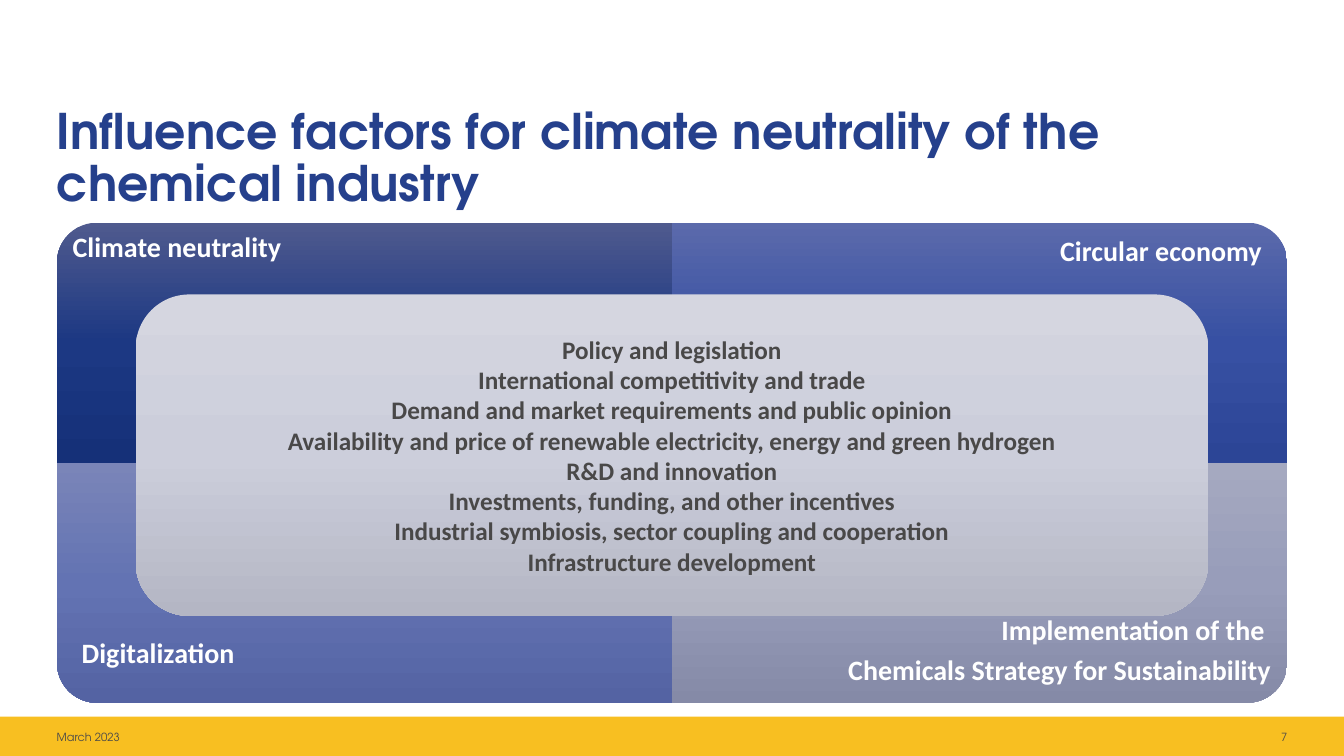
from lxml import etree
from pptx import Presentation
from pptx.dml.color import RGBColor
from pptx.enum.shapes import MSO_SHAPE
from pptx.enum.text import MSO_ANCHOR, PP_ALIGN
from pptx.oxml.ns import qn
from pptx.util import Cm, Pt

LEFT, CENTER, RIGHT = PP_ALIGN.LEFT, PP_ALIGN.CENTER, PP_ALIGN.RIGHT
TOP, MIDDLE = MSO_ANCHOR.TOP, MSO_ANCHOR.MIDDLE
RECTANGLE = MSO_SHAPE.RECTANGLE
ROUNDED = MSO_SHAPE.ROUNDED_RECTANGLE
ONE_ROUND_CORNER = MSO_SHAPE.ROUND_1_RECTANGLE

HEADING_FONT, BODY_FONT = "TeX Gyre Adventor", "Calibri"
SLIDE_WIDTH, SLIDE_HEIGHT = 33.87, 19.05
MARGIN = 1.43
CENTER_X, CENTER_Y = SLIDE_WIDTH / 2, 11.66
QUADRANT_WIDTH, QUADRANT_HEIGHT = 15.5, 6.05

# horizontal side, vertical side, rotation, gradient colours from top to bottom
QUADRANTS = [
    (-1, -1, 270, ("4F5A8E", "1C3883", "153078")),
    (1, -1, 0, ("5B6AAB", "3750A3", "2C4596")),
    (-1, 1, 180, ("7A85B8", "6373B3", "5463A3")),
    (1, 1, 90, ("A5A9C0", "989DBA", "858AA7")),
]
LABEL_WIDTH = 14
# lines, left, vertical centre, alignment
LABELS = [
    (["Climate neutrality"], 1.83, 6.25, LEFT),
    (["Circular economy"], 31.8 - LABEL_WIDTH, 6.35, RIGHT),
    (["Digitalization"], 2.06, 16.49, LEFT),
    (["Implementation of the ", "Chemicals Strategy for Sustainability"],
     32.03 - LABEL_WIDTH, 16.41, RIGHT),
]
FACTORS = [
    "Policy and legislation",
    "International competitivity and trade",
    "Demand and market requirements and public opinion",
    "Availability and price of renewable electricity, energy and green hydrogen",
    "R&D and innovation",
    "Investments, funding, and other incentives",
    "Industrial symbiosis, sector coupling and cooperation",
    "Infrastructure development",
]


def color(hex_string):
    return RGBColor.from_string(hex_string)


def write_text(shape, lines, size, font, text_color, bold=False, align=LEFT,
               anchor=MIDDLE, line_spacing=1.0, gap=0):
    """Fill a shape with one paragraph per line; gap is the points between them."""
    frame = shape.text_frame
    frame.word_wrap = True
    frame.vertical_anchor = anchor
    frame.margin_left = frame.margin_right = 0
    frame.margin_top = frame.margin_bottom = 0
    for index, line in enumerate(lines):
        paragraph = frame.add_paragraph() if index else frame.paragraphs[0]
        paragraph.alignment = align
        paragraph.line_spacing = line_spacing
        paragraph.space_before = Pt(gap if index else 0)
        run = paragraph.add_run()
        run.text = line
        run.font.name = font
        run.font.size = Pt(size)
        run.font.bold = bold
        run.font.color.rgb = color(text_color)


def add_text(slide, left, top, width, height, lines, **text_format):
    box = slide.shapes.add_textbox(Cm(left), Cm(top), Cm(width), Cm(height))
    write_text(box, lines, **text_format)


def add_block(slide, kind, left, top, width, height):
    shape = slide.shapes.add_shape(kind, Cm(left), Cm(top), Cm(width), Cm(height))
    shape.shadow.inherit = False
    shape.line.fill.background()
    return shape


def fill_gradient(shape, colors):
    """Blend three colours downwards, whatever the rotation of the shape."""
    shape.fill.gradient()
    shape.fill.gradient_angle = 270
    gradient = shape._element.spPr.find(qn("a:gradFill"))
    gradient.set("rotWithShape", "0")
    stops = gradient.find(qn("a:gsLst"))
    for stop in list(stops):
        stops.remove(stop)
    for position, hex_string in zip((0, 50000, 100000), colors):
        stop = etree.SubElement(stops, qn("a:gs"), pos=str(position))
        etree.SubElement(stop, qn("a:srgbClr"), val=hex_string)


def add_quadrant(slide, side_x, side_y, rotation, colors):
    width, height = QUADRANT_WIDTH, QUADRANT_HEIGHT
    middle_x = CENTER_X + side_x * width / 2
    middle_y = CENTER_Y + side_y * height / 2
    if rotation % 180:
        width, height = height, width
    shape = add_block(slide, ONE_ROUND_CORNER, middle_x - width / 2,
                      middle_y - height / 2, width, height)
    shape.rotation = rotation
    fill_gradient(shape, colors)


def add_footer(slide):
    bar = add_block(slide, RECTANGLE, 0, 18.06, SLIDE_WIDTH, 0.99)
    bar.fill.solid()
    bar.fill.fore_color.rgb = color("F8BF21")
    width = 5
    for text, left, align in (("March 2023", MARGIN, LEFT),
                              ("7", SLIDE_WIDTH - MARGIN - width, RIGHT)):
        add_text(slide, left, 18.29, width, 0.58, [text], size=8,
                 font=HEADING_FONT, text_color="4A4949", align=align)


def main():
    presentation = Presentation()
    presentation.slide_width = Cm(SLIDE_WIDTH)
    presentation.slide_height = Cm(SLIDE_HEIGHT)
    slide = presentation.slides.add_slide(presentation.slide_layouts[6])

    add_footer(slide)
    add_text(slide, MARGIN, 2.69, 31, 2.01,
             ["Influence factors for climate neutrality of the chemical industry"],
             size=35, font=HEADING_FONT, text_color="25408C", bold=True,
             anchor=TOP, line_spacing=0.9)
    for quadrant in QUADRANTS:
        add_quadrant(slide, *quadrant)
    for lines, left, middle, align in LABELS:
        height = len(lines)
        add_text(slide, left, middle - height / 2, LABEL_WIDTH, height, lines,
                 size=20, font=BODY_FONT, text_color="FFFFFF", bold=True,
                 align=align, line_spacing=0.9, gap=7)
    panel = add_block(slide, ROUNDED, 3.42, 7.42, 27.03, 8.1)
    fill_gradient(panel, ("D5D6E0", "CCCEDB", "B4B6C4"))
    write_text(panel, FACTORS, size=18, font=BODY_FONT, text_color="494848",
               bold=True, align=CENTER)

    presentation.save("out.pptx")


if __name__ == "__main__":
    main()
